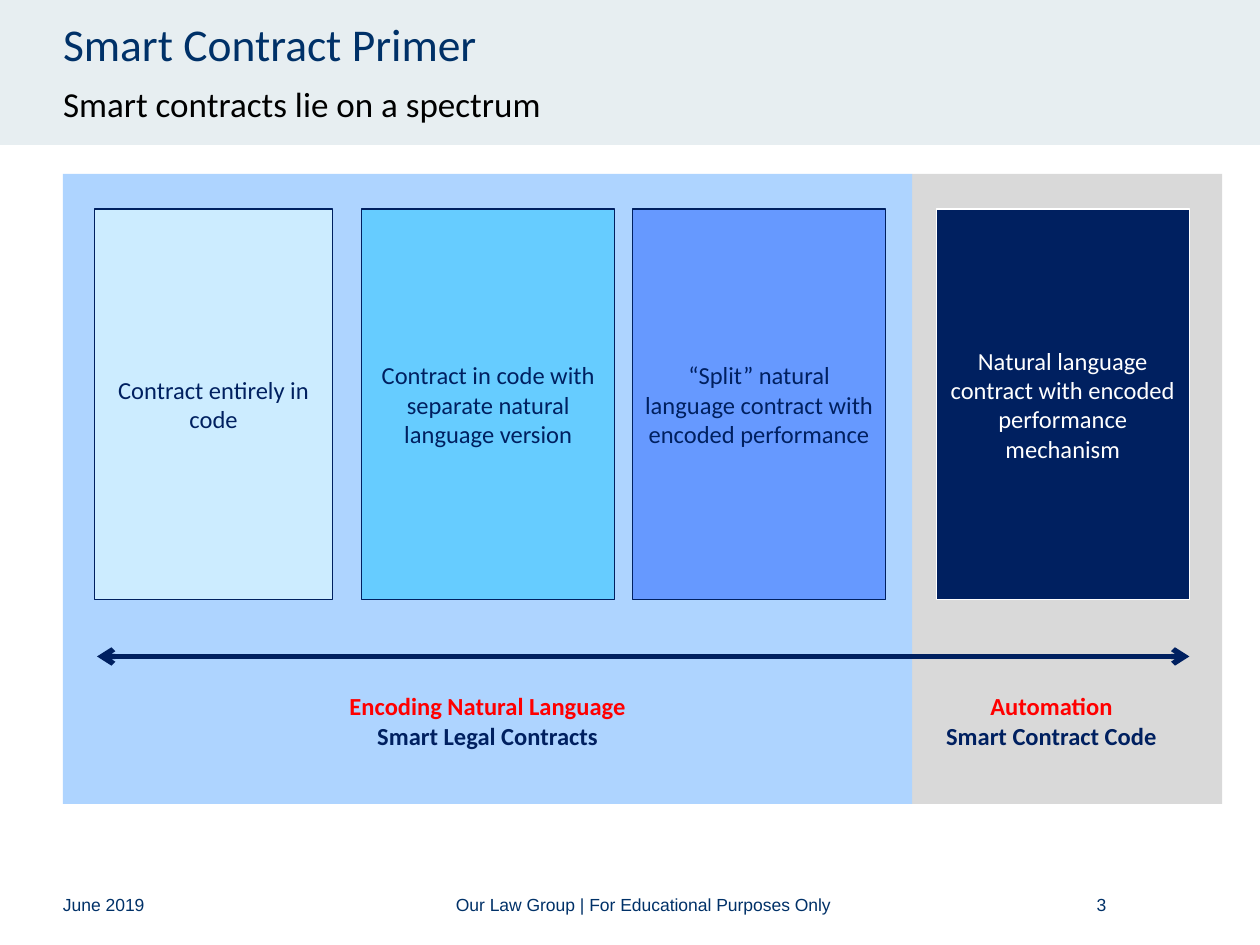
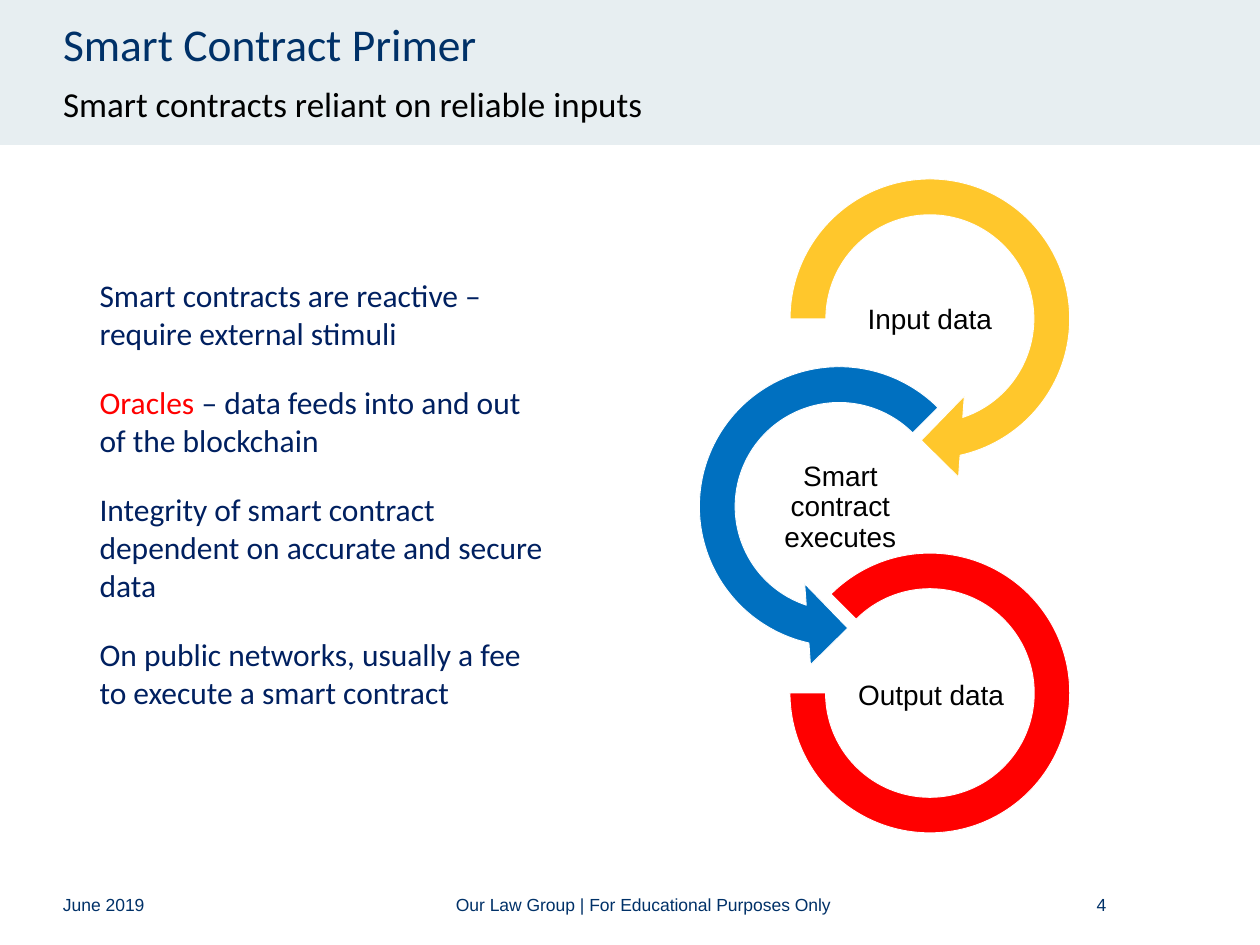
from dataclasses import dataclass
from typing import NamedTuple, Optional, Sequence

from lxml.etree import SubElement
from pptx import Presentation
from pptx.dml.color import RGBColor
from pptx.enum.shapes import MSO_CONNECTOR, MSO_SHAPE
from pptx.enum.text import MSO_ANCHOR as Anchor, MSO_AUTO_SIZE as AutoSize, PP_ALIGN as Align
from pptx.oxml.ns import qn
from pptx.util import Inches, Pt

# The slide is a grid of 40 columns and 30 rows of equal square cells.
WIDTH, HEIGHT = Inches(10), Inches(7.5)
COLUMN, ROW = WIDTH / 40, HEIGHT / 30

WHITE = RGBColor(0xFF, 0xFF, 0xFF)
BLACK = RGBColor(0x00, 0x00, 0x00)
RED = RGBColor(0xFF, 0x00, 0x00)
NAVY = RGBColor(0x00, 0x20, 0x60)
TITLE_BLUE = RGBColor(0x00, 0x31, 0x68)
BAND_GREY = RGBColor(0xE7, 0xEE, 0xF1)
PANEL_GREY = RGBColor(0xD9, 0xD9, 0xD9)
PANEL_BLUE = RGBColor(0xAE, 0xD4, 0xFF)
PALE_BLUE = RGBColor(0xCC, 0xEC, 0xFF)
SKY_BLUE = RGBColor(0x66, 0xCC, 0xFF)
MID_BLUE = RGBColor(0x66, 0x99, 0xFF)
GOLD = RGBColor(0xFF, 0xC7, 0x2C)
ARROW_BLUE = RGBColor(0x00, 0x70, 0xC0)

HEADING = "Smart Contract Primer"
DATE = "June 2019"
FOOTER = "Our Law Group | For Educational Purposes Only"
FIRST_NUMBER = 3
TITLE_AND_CONTENT, TWO_CONTENT = 1, 3


class Area(NamedTuple):
    """Left, top, width and height in grid columns and rows."""
    left: float
    top: float
    width: float
    height: float

    def lengths(self) -> tuple[int, int, int, int]:
        return (round(self.left * COLUMN), round(self.top * ROW),
                round(self.width * COLUMN), round(self.height * ROW))


class Span(NamedTuple):
    text: str
    color: RGBColor


@dataclass(frozen=True)
class Style:
    size: float
    font: str = "Calibri"
    bold: bool = False
    align: Align = Align.LEFT
    anchor: Anchor = Anchor.MIDDLE
    spacing: float = 1
    gap: float = 0
    inset: tuple[float, float] = (0, 0)


@dataclass(frozen=True)
class Card:
    left: float
    width: float
    fill: RGBColor
    span: Span
    border: RGBColor = NAVY


@dataclass(frozen=True)
class Stage:
    """One ring of the data flow with the label inside it."""
    kind: MSO_SHAPE
    area: Area
    adjustments: tuple[float, ...]
    fill: RGBColor
    label: str
    label_left: float
    label_top: float


PADDING = (0.1, 0.05)
TITLE = Style(26, spacing=0.9)
SUBTITLE = Style(20, spacing=0.9)
LIST = Style(18, anchor=Anchor.TOP, gap=18, inset=PADDING)
CARD = Style(14, align=Align.CENTER, inset=PADDING)
CAPTION = Style(14, bold=True, align=Align.CENTER, inset=PADDING)
LABEL = Style(16, "Arial", align=Align.CENTER, spacing=0.9, inset=(0.01, 0.01))

MARGIN, HEAD_WIDTH, HEAD_HEIGHT = 2, 33.16, 1.8
FOOTER_TOP, FOOTER_HEIGHT = 28.32, 0.8
PANEL_TOP, PANEL_HEIGHT = 5.52, 20
CARD_TOP, CARD_HEIGHT = 6.64, 12.4
AXIS_ROW, AXIS_START, AXIS_END = 20.84, 3.08, 37.76
CAPTION_HEIGHT = 4.08
RING = 10.32

CARDS = (
    Card(3, 7.56, PALE_BLUE, Span("Contract entirely in code", NAVY)),
    Card(11.48, 8.04, SKY_BLUE,
         Span("Contract in code with separate natural language version", NAVY)),
    Card(20.08, 8.04, MID_BLUE,
         Span("“Split” natural language contract with encoded performance", NAVY)),
    Card(29.72, 8.04, NAVY,
         Span("Natural language contract with encoded performance mechanism", WHITE), WHITE),
)
PANELS = (
    (Area(28.96, PANEL_TOP, 9.84, PANEL_HEIGHT), PANEL_GREY),
    (Area(MARGIN, PANEL_TOP, 26.96, PANEL_HEIGHT), PANEL_BLUE),
)
CAPTIONS = (
    (Area(28.6, AXIS_ROW, 9.56, CAPTION_HEIGHT), "Automation", "Smart Contract Code"),
    (Area(2.52, AXIS_ROW, 25.92, CAPTION_HEIGHT),
     "Encoding Natural Language", "Smart Legal Contracts"),
)
POINTS = (
    [Span("Smart contracts are reactive – require external stimuli", NAVY)],
    [Span("Oracles ", RED), Span("– data feeds into and out of the blockchain", NAVY)],
    [Span("Integrity of smart contract dependent on accurate and secure data", NAVY)],
    [Span("On public networks, usually a fee to execute a smart contract", NAVY)],
)
STAGES = (
    Stage(MSO_SHAPE.CIRCULAR_ARROW, Area(24.36, 4.96, RING, RING),
          (0.11, 11.42, 45, 108, 0.125), GOLD, "Input data", 26.64, 8.72),
    Stage(MSO_SHAPE.LEFT_CIRCULAR_ARROW, Area(21.48, 10.92, RING, RING),
          (0.11, 11.42, 63, 189, 0.125), ARROW_BLUE, "Smart contract executes", 23.8, 14.68),
    Stage(MSO_SHAPE.BLOCK_ARC, Area(25.08, 17.56, 8.88, 8.88),
          (135, 108, 0.127), RED, "Output data", 26.68, 20.68),
)


def write(shape, paragraphs: Sequence[Sequence[Span]], style: Style) -> None:
    frame = shape.text_frame
    frame.word_wrap = True
    frame.auto_size = AutoSize.NONE
    frame.vertical_anchor = style.anchor
    frame.margin_left = frame.margin_right = Inches(style.inset[0])
    frame.margin_top = frame.margin_bottom = Inches(style.inset[1])
    for index, spans in enumerate(paragraphs):
        para = frame.add_paragraph() if index else frame.paragraphs[0]
        if shape.is_placeholder:
            properties = para._p.get_or_add_pPr()
            properties.set("marL", "0")
            properties.set("indent", "0")
            SubElement(properties, qn("a:buNone"))
        para.alignment = style.align
        para.line_spacing = style.spacing
        para.space_before = Pt(style.gap if index else 0)
        for span in spans:
            run = para.add_run()
            run.text = span.text
            font = run.font
            font.name, font.size, font.bold = style.font, Pt(style.size), style.bold
            font.color.rgb = span.color


def add_figure(slide, kind: MSO_SHAPE, area: Area, fill: RGBColor,
               border: Optional[RGBColor] = None, weight: float = 0.75):
    shape = slide.shapes.add_shape(kind, *area.lengths())
    shape.shadow.inherit = False
    shape.fill.solid()
    shape.fill.fore_color.rgb = fill
    if border is None:
        shape.line.fill.background()
    else:
        shape.line.color.rgb = border
        shape.line.width = Pt(weight)
    return shape


def add_text(slide, area: Area, paragraphs: Sequence[Sequence[Span]], style: Style) -> None:
    write(slide.shapes.add_textbox(*area.lengths()), paragraphs, style)


def fill_placeholder(shape, area: Area, paragraphs: Sequence[Sequence[Span]],
                     style: Style) -> None:
    shape.left, shape.top, shape.width, shape.height = area.lengths()
    write(shape, paragraphs, style)


def start_slide(deck, layout: int, subtitle: str):
    """Add a slide with the shared band, heading and footer."""
    slide = deck.slides.add_slide(deck.slide_layouts[layout])
    band = add_figure(slide, MSO_SHAPE.RECTANGLE, Area(0, 0, 40, 4.6), BAND_GREY).element
    band.getparent().insert(2, band)
    fill_placeholder(slide.shapes.title, Area(MARGIN, 0.6, HEAD_WIDTH, HEAD_HEIGHT),
                     [[Span(HEADING, TITLE_BLUE)]], TITLE)
    fill_placeholder(slide.placeholders[1], Area(MARGIN, 2.48, HEAD_WIDTH, HEAD_HEIGHT),
                     [[Span(subtitle, BLACK)]], SUBTITLE)
    number = str(FIRST_NUMBER + len(deck.slides) - 1)
    for left, width, text, align in ((MARGIN, 5.36, DATE, Align.LEFT),
                                     (7.36, 26.12, FOOTER, Align.CENTER),
                                     (33.52, 1.6, number, Align.RIGHT)):
        add_text(slide, Area(left, FOOTER_TOP, width, FOOTER_HEIGHT),
                 [[Span(text, TITLE_BLUE)]], Style(10, "Arial", align=align))
    return slide


def add_axis(slide) -> None:
    """Draw the double-headed arrow under the cards."""
    y = round(AXIS_ROW * ROW)
    axis = slide.shapes.add_connector(MSO_CONNECTOR.STRAIGHT, round(AXIS_START * COLUMN), y,
                                      round(AXIS_END * COLUMN), y)
    axis.line.color.rgb = NAVY
    axis.line.width = Pt(3)
    line = axis.line._get_or_add_ln()
    for end in ("a:headEnd", "a:tailEnd"):
        SubElement(line, qn(end), type="arrow")
    SubElement(axis.element.spPr, qn("a:effectLst"))


def build_spectrum(deck) -> None:
    slide = start_slide(deck, TITLE_AND_CONTENT, "Smart contracts lie on a spectrum")
    for area, fill in PANELS:
        add_figure(slide, MSO_SHAPE.RECTANGLE, area, fill)
    for card in CARDS:
        box = add_figure(slide, MSO_SHAPE.RECTANGLE,
                         Area(card.left, CARD_TOP, card.width, CARD_HEIGHT),
                         card.fill, card.border)
        write(box, [[card.span]], CARD)
    for area, purpose, name in CAPTIONS:
        add_text(slide, area, [[Span(purpose, RED)], [Span(name, NAVY)]], CAPTION)
    add_axis(slide)


def build_inputs(deck) -> None:
    slide = start_slide(deck, TWO_CONTENT, "Smart contracts reliant on reliable inputs")
    fill_placeholder(slide.placeholders[2], Area(2.76, 8.56, 15.04, 14.32), POINTS, LIST)
    for stage in STAGES:
        ring = add_figure(slide, stage.kind, stage.area, stage.fill, WHITE, 0.5)
        for index, value in enumerate(stage.adjustments):
            ring.adjustments[index] = value
        add_text(slide, Area(stage.label_left, stage.label_top, 5.76, 2.88),
                 [[Span(stage.label, BLACK)]], LABEL)


def main() -> None:
    deck = Presentation()
    deck.slide_width, deck.slide_height = WIDTH, HEIGHT
    build_spectrum(deck)
    build_inputs(deck)
    deck.save("out.pptx")


if __name__ == "__main__":
    main()
